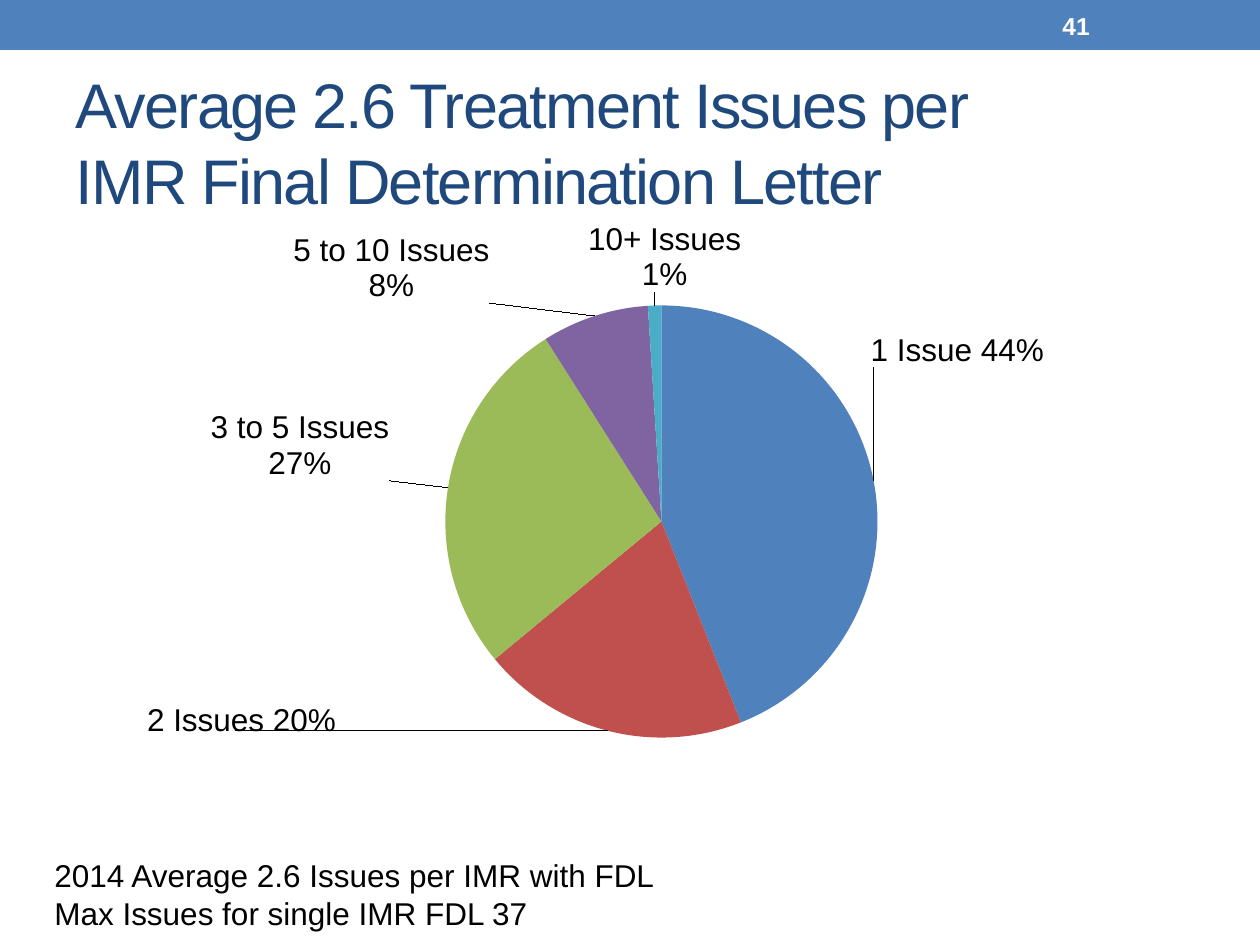
from lxml.etree import SubElement
from pptx import Presentation
from pptx.chart.data import CategoryChartData
from pptx.dml.color import RGBColor
from pptx.enum.chart import XL_CHART_TYPE
from pptx.enum.shapes import MSO_SHAPE
from pptx.enum.text import MSO_ANCHOR, PP_ALIGN
from pptx.oxml import parse_xml
from pptx.oxml.ns import nsdecls, qn
from pptx.util import Pt

PX = 914400 / 126
BLUE, NAVY, WHITE, BLACK = "4F81BD", "1F497D", "FFFFFF", "000000"

# category, share, slice colour, label separator, label shift (fractions of chart)
ISSUES = [
    ("1 Issue", 0.44, BLUE, " ", -0.01, -0.19),
    ("2 Issues", 0.20, "C0504D", " ", -0.36, -0.06),
    ("3 to 5 Issues", 0.27, "9BBB59", "\n", -0.05, -0.01),
    ("5 to 10 Issues", 0.08, "8064A2", "\n", -0.1, -0.01),
    ("10+ Issues", 0.01, "4BACC6", "\n", 0.01, -0.01),
]


def emu(*lengths):
    return [round(length * PX) for length in lengths]


def rgb(value):
    return RGBColor.from_string(value)


def set_font(font, color, **values):
    font.color.rgb = rgb(color)
    for name, value in {"name": "Arial", "bold": False, **values}.items():
        setattr(font, name, value)


def write(frame, lines, color, size, anchor=MSO_ANCHOR.TOP, bold=False):
    frame.word_wrap = True
    frame.vertical_anchor = anchor
    frame.text = lines
    for paragraph in frame.paragraphs:
        paragraph.alignment = PP_ALIGN.LEFT
        for run in paragraph.runs:
            set_font(run.font, color, size=Pt(size), bold=bold)


def add_header(slide, left, top, width, height):
    band = slide.shapes.add_shape(MSO_SHAPE.RECTANGLE, *emu(left, top, width, height))
    band.shadow.inherit = False
    band.fill.solid()
    band.fill.fore_color.rgb = rgb(BLUE)
    band.line.fill.background()
    # Page number
    number = slide.shapes.add_textbox(*emu(left + 1050, top + 3, 147, 45))
    write(number.text_frame, "41", WHITE, 14, MSO_ANCHOR.MIDDLE, bold=True)


def add_title(slide, left, top, width, height):
    title = slide.shapes.title
    title.left, title.top, title.width, title.height = emu(left, top, width, height)
    write(title.text_frame,
          "Average 2.6 Treatment Issues per \vIMR Final Determination Letter",
          NAVY, 36, MSO_ANCHOR.MIDDLE)
    for run in title.text_frame.paragraphs[0].runs:
        run.font._element.set("spc", "-100")


def layout_xml(**values):
    parts = "".join(f'<c:{name} val="{value}"/>' for name, value in values.items())
    return f"<c:layout><c:manualLayout>{parts}</c:manualLayout></c:layout>"


def label_xml(index, separator, dx, dy):
    return parse_xml(
        f'<c:dLbl {nsdecls("c")}><c:idx val="{index}"/>{layout_xml(x=dx, y=dy)}'
        '<c:numFmt formatCode="0%" sourceLinked="0"/>'
        '<c:dLblPos val="outEnd"/><c:showLegendKey val="0"/><c:showVal val="1"/>'
        '<c:showCatName val="1"/><c:showSerName val="0"/><c:showPercent val="0"/>'
        f'<c:showBubbleSize val="0"/><c:separator>{separator}</c:separator></c:dLbl>')


def add_issue_chart(slide, left, top, width, height):
    data = CategoryChartData(number_format="0%")
    data.categories = [issue[0] for issue in ISSUES]
    data.add_series("Series 1", [issue[1] for issue in ISSUES])
    chart = slide.shapes.add_chart(
        XL_CHART_TYPE.PIE, *emu(left, top, width, height), data).chart
    chart.has_legend = chart.has_title = False
    set_font(chart.font, BLACK, size=Pt(18))
    plot = chart.plots[0]
    plot.vary_by_categories = True
    series = plot.series[0]

    labels = series.data_labels
    set_font(labels.font, BLACK, size=Pt(18))
    labels.number_format, labels.number_format_is_linked = "0%", False
    labels.show_value = labels.show_category_name = True
    leaders = labels._element.find(qn("c:showLeaderLines"))
    if leaders is None:
        leaders = SubElement(labels._element, qn("c:showLeaderLines"))
    leaders.set("val", "1")

    # Slices and their shifted labels
    for index, (_, _, color, separator, dx, dy) in enumerate(ISSUES):
        fill = series.points[index].format.fill
        fill.solid()
        fill.fore_color.rgb = rgb(color)
        labels._element.insert(index, label_xml(index, separator, dx, dy))
        set_font(series.points[index].data_label.font, BLACK, size=Pt(18))

    # Fixed place of the pie
    area = chart._chartSpace.chart.plotArea
    for old in area.findall(qn("c:layout")):
        area.remove(old)
    place = layout_xml(layoutTarget="inner", xMode="edge", yMode="edge",
                       x=0.29, y=0.16, w=0.42, h=0.74)
    area.insert(0, parse_xml(place.replace("<c:layout>", f'<c:layout {nsdecls("c")}>', 1)))


def add_footnote(slide, left, top, width, height):
    note = slide.shapes.add_textbox(*emu(left, top, width, height))
    write(note.text_frame,
          "2014 Average 2.6 Issues per IMR with FDL\nMax Issues for single IMR FDL 37",
          BLACK, 18)


def main():
    deck = Presentation()
    deck.slide_width, deck.slide_height = emu(1260, 945)
    slide = deck.slides.add_slide(deck.slide_layouts[5])
    add_header(slide, 0, 0, 1260, 50)
    add_title(slide, 63, 73, 1134, 136)
    add_issue_chart(slide, 147, 210, 1029, 588)
    add_footnote(slide, 42, 850, 809, 89)
    deck.save("out.pptx")


if __name__ == "__main__":
    main()
